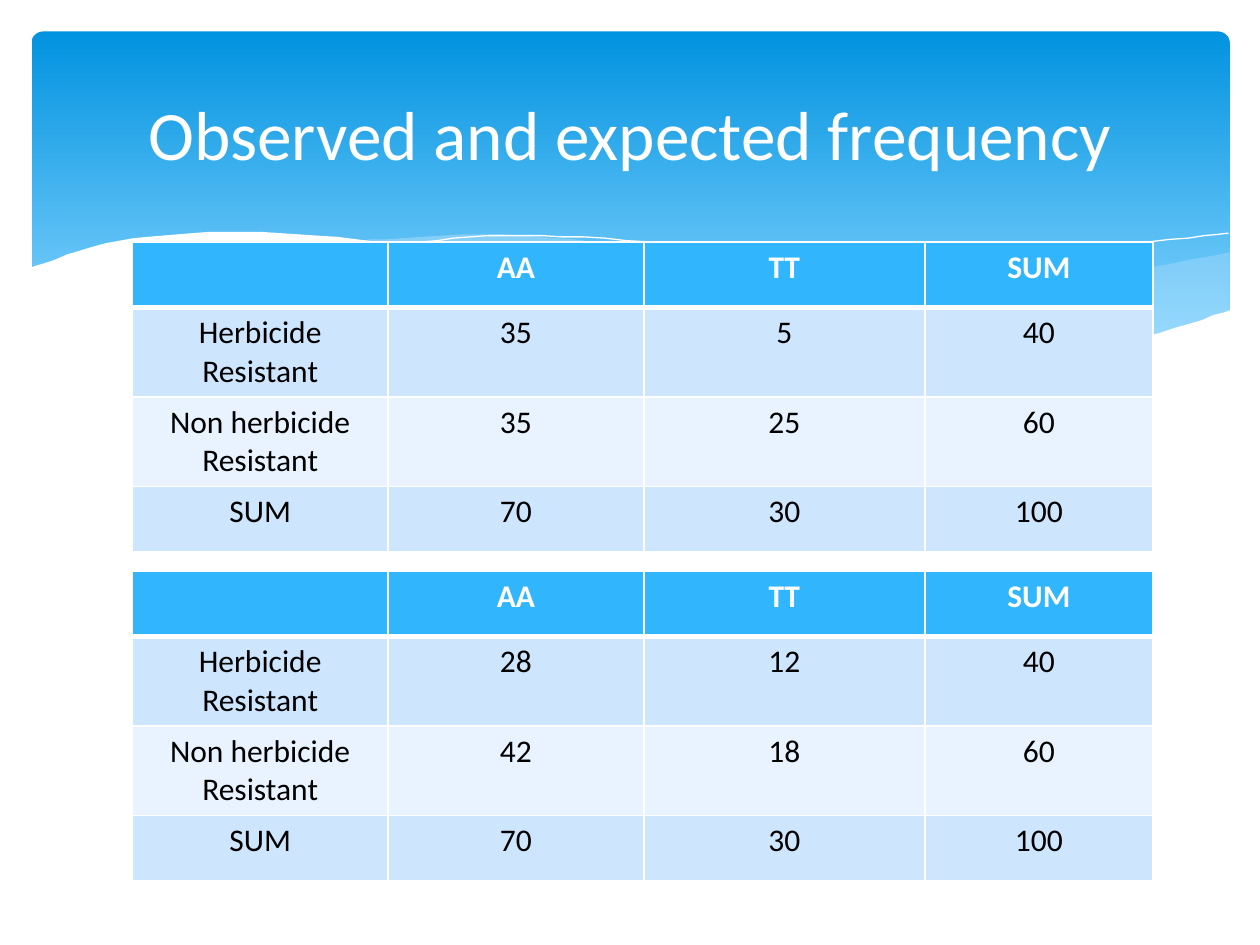
from dataclasses import dataclass
from typing import Optional

from lxml.etree import SubElement
from pptx import Presentation
from pptx.dml.color import RGBColor
from pptx.enum.shapes import MSO_SHAPE
from pptx.enum.text import MSO_ANCHOR, PP_ALIGN
from pptx.oxml.ns import qn
from pptx.util import Pt

SCALE = 9144
STEPS = 8
FONT = "Calibri"
WHITE, BLACK, HEAD, PALE = "FFFFFF", "000000", "31B6FD", "C6E7FC"
BANDS = ("CEE5FE", "E8F3FF")
COLS = (203, 203, 223, 181)
ROW = 52
Knots = list[tuple[int, int]]


@dataclass
class Wave:
    curves: list[Knots]
    fill: Optional[str] = None
    alpha: int = 100


@dataclass
class Grid:
    top: int
    rows: list[tuple[str, ...]]


WAVES = [
    Wave([[(976, 200), (861, 223), (661, 265)],
          [(661, 265), (745, 275), (835, 277), (913, 267), (976, 247)]], PALE, 29),
    Wave([[(893, 273), (775, 254), (629, 222), (514, 198), (399, 186), (286, 191)],
          [(286, 191), (404, 211), (566, 248), (695, 270), (796, 278), (893, 273)]],
         PALE, 40),
    Wave([[(309, 195), (401, 187), (533, 194), (695, 219), (907, 272)]]),
    Wave([[(613, 257), (748, 223), (866, 199), (975, 185)]]),
    Wave([[(977, 246), (899, 269), (809, 277), (688, 268), (555, 245), (447, 220),
           (316, 194), (193, 184), (95, 191), (23, 213)],
          [(23, 329), (977, 329)]], WHITE),
]

NAMES = ("Herbicide Resistant", "Non herbicide\nResistant", "SUM")
TOTALS = ("70", "30", "100")


def grid(top: int, *counts: tuple[str, ...]) -> Grid:
    body = [(name, *row) for name, row in zip(NAMES, (*counts, TOTALS))]
    return Grid(top, [("", "AA", "TT", "SUM"), *body])


GRIDS = [grid(192, ("35", "5", "40"), ("35", "25", "60")),
         grid(453, ("28", "12", "40"), ("42", "18", "60"))]


def px(*sizes: int) -> list[int]:
    return [size * SCALE for size in sizes]


def tint(code: str) -> RGBColor:
    return RGBColor.from_string(code)


def blend(a: float, b: float, c: float, d: float, t: float) -> float:
    bend = (2 * a - 5 * b + 4 * c - d) * t * t
    return b + ((c - a) * t + bend + (3 * b - a - 3 * c + d) * t ** 3) / 2


def smooth(knots: Knots) -> list[tuple[float, float]]:
    ends = [knots[0], *knots, knots[-1]]
    points = [tuple(blend(*axis, step / STEPS) for axis in zip(*quad))
              for quad in zip(ends, ends[1:], ends[2:], ends[3:])
              for step in range(STEPS)]
    return [*points, knots[-1]]


def draw_panel(shapes) -> None:
    panel = shapes.add_shape(MSO_SHAPE.ROUNDED_RECTANGLE, *px(25, 25, 951, 270))
    panel.adjustments[0] = 0.034
    panel.shadow.inherit = False
    panel.line.fill.background()
    panel.fill.gradient()
    panel.fill.gradient_angle = 270
    stops = ((0, "0293E0"), (0.9, "83D3FE"))
    for stop, (place, code) in zip(panel.fill.gradient_stops, stops):
        stop.position = place
        stop.color.rgb = tint(code)


def draw_wave(shapes, wave: Wave) -> None:
    points = [point for curve in wave.curves for point in smooth(curve)]
    pen = shapes.build_freeform(*points[0], scale=SCALE)
    pen.add_line_segments(points[1:], close=wave.fill is not None)
    shape = pen.convert_to_shape()
    shape.shadow.inherit = False
    if wave.fill is None:
        shape.fill.background()
        shape.line.color.rgb = tint(WHITE)
        shape.line.width = Pt(0)
        return
    shape.line.fill.background()
    shape.fill.solid()
    shape.fill.fore_color.rgb = tint(wave.fill)
    if wave.alpha < 100:
        color = shape.fill._xPr.find(".//" + qn("a:srgbClr"))
        SubElement(color, qn("a:alpha"), val=str(wave.alpha * 1000))


def add_edges(cell, base: int) -> None:
    props = cell._tc.get_or_add_tcPr()
    for side, width in (("L", 1), ("R", 1), ("T", 1), ("B", base)):
        edge = SubElement(props, qn("a:ln" + side), w=str(int(Pt(width))))
        fill = SubElement(edge, qn("a:solidFill"))
        SubElement(fill, qn("a:srgbClr"), val=WHITE)


def style(para, size: float, code: str, bold: bool = False) -> None:
    para.alignment = PP_ALIGN.CENTER
    para.font.name = FONT
    para.font.size = Pt(size)
    para.font.bold = bold
    para.font.color.rgb = tint(code)


def draw_grid(shapes, grid: Grid) -> None:
    count = len(grid.rows)
    frame = shapes.add_table(count, len(COLS),
                             *px(105, grid.top, sum(COLS), ROW * count))
    table = frame.table
    for col, width in zip(table.columns, px(*COLS)):
        col.width = width
    for i, texts in enumerate(grid.rows):
        first = i == 0
        for j, text in enumerate(texts):
            cell = table.cell(i, j)
            add_edges(cell, 3 if first else 1)
            cell.fill.solid()
            cell.fill.fore_color.rgb = tint(HEAD if first else BANDS[(i - 1) % 2])
            cell.text = text
            for para in cell.text_frame.paragraphs:
                style(para, 18, WHITE if first else BLACK, first)


def set_title(shapes, text: str) -> None:
    title = shapes.title
    title.left, title.top, title.width, title.height = px(50, 37, 900, 137)
    title.text = text
    title.text_frame.word_wrap = True
    title.text_frame.vertical_anchor = MSO_ANCHOR.MIDDLE
    style(title.text_frame.paragraphs[0], 39.6, WHITE)
    shapes._spTree.append(title._element)


def main() -> None:
    deck = Presentation()
    deck.slide_width, deck.slide_height = px(1000, 750)
    shapes = deck.slides.add_slide(deck.slide_layouts[5]).shapes
    draw_panel(shapes)
    for wave in WAVES:
        draw_wave(shapes, wave)
    set_title(shapes, "Observed and expected frequency")
    for item in GRIDS:
        draw_grid(shapes, item)
    deck.save("out.pptx")


if __name__ == "__main__":
    main()
